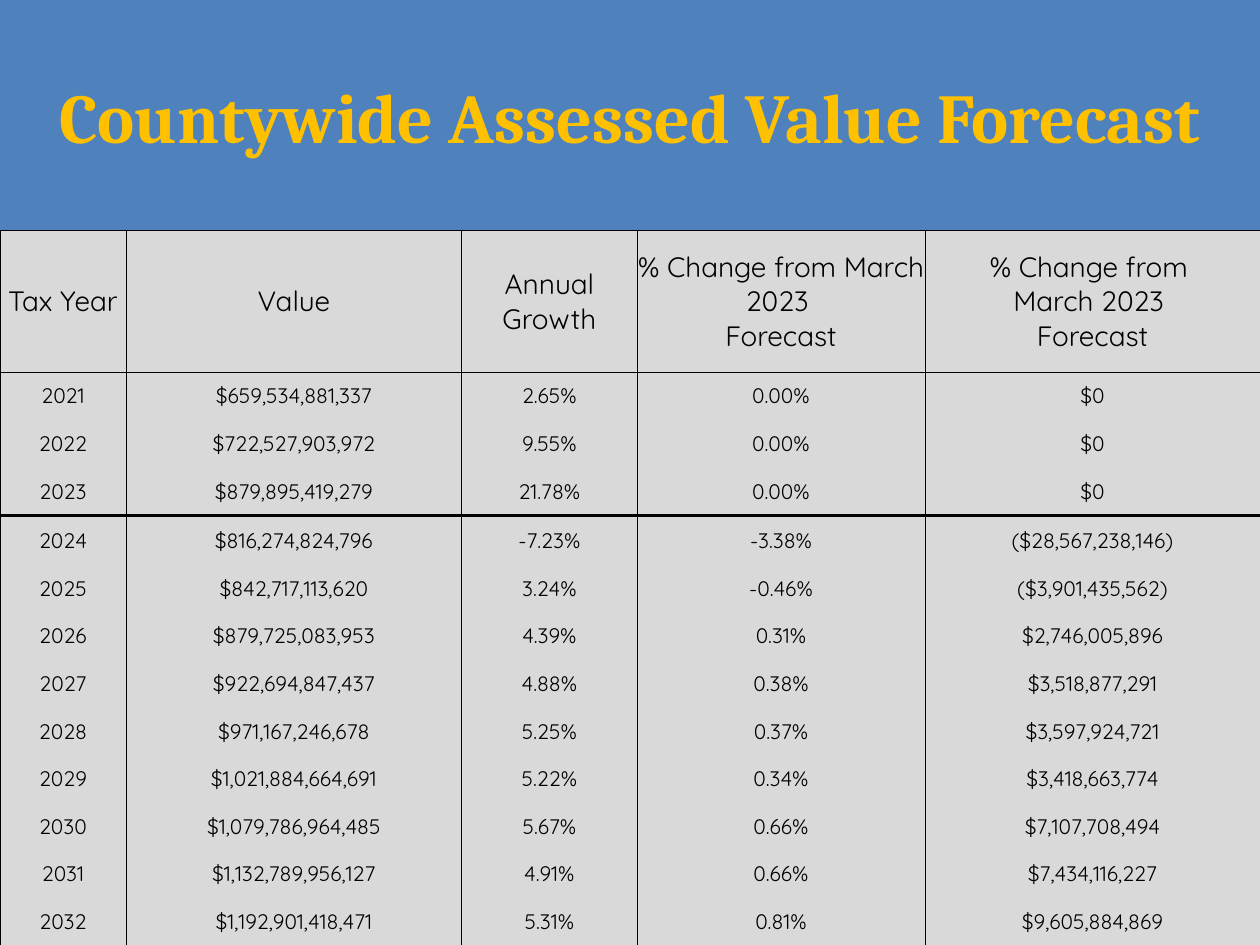
from lxml import etree
from pptx import Presentation
from pptx.dml.color import RGBColor
from pptx.enum.shapes import MSO_SHAPE
from pptx.enum.text import MSO_ANCHOR, PP_ALIGN
from pptx.oxml.ns import qn
from pptx.util import Cm, Pt

RECTANGLE = MSO_SHAPE.RECTANGLE
MIDDLE = MSO_ANCHOR.MIDDLE
CENTER = PP_ALIGN.CENTER

COLORS = {
    "banner": "4F81BD",
    "title": "FFC000",
    "cell": "D9D9D9",
    "ink": "000000",
    "page": "FFFFFF",
}
SLIDE_WIDTH, SLIDE_HEIGHT = Cm(25.4), Cm(19.05)
BANNER_HEIGHT = Cm(4.65)
COLUMN_WIDTHS = [2.54, 6.77, 3.53, 5.81, 6.75]
HEADER_HEIGHT, YEAR_HEIGHT, DIVIDED_YEAR_HEIGHT = 2.85, 0.96, 0.98
THIN, THICK = 0.5, 2

HEADINGS = [
    "Tax Year",
    "Value",
    "Annual Growth",
    "% Change from March 2023 \vForecast",
    "% Change from \vMarch 2023 \vForecast",
]
FORECAST = [
    ("2021", "$659,534,881,337", "2.65%", "0.00%", "$0"),
    ("2022", "$722,527,903,972", "9.55%", "0.00%", "$0"),
    ("2023", "$879,895,419,279", "21.78%", "0.00%", "$0"),
    ("2024", "$816,274,824,796", "-7.23%", "-3.38%", "($28,567,238,146)"),
    ("2025", "$842,717,113,620", "3.24%", "-0.46%", "($3,901,435,562)"),
    ("2026", "$879,725,083,953", "4.39%", "0.31%", "$2,746,005,896"),
    ("2027", "$922,694,847,437", "4.88%", "0.38%", "$3,518,877,291"),
    ("2028", "$971,167,246,678", "5.25%", "0.37%", "$3,597,924,721"),
    ("2029", "$1,021,884,664,691", "5.22%", "0.34%", "$3,418,663,774"),
    ("2030", "$1,079,786,964,485", "5.67%", "0.66%", "$7,107,708,494"),
    ("2031", "$1,132,789,956,127", "4.91%", "0.66%", "$7,434,116,227"),
    ("2032", "$1,192,901,418,471", "5.31%", "0.81%", "$9,605,884,869"),
]
LAST_ACTUAL_YEAR = "2023"


def color(name):
    return RGBColor.from_string(COLORS[name])


def style_paragraph(paragraph, font_name, size, color_name, bold=False):
    paragraph.alignment = CENTER
    paragraph.font.name = font_name
    paragraph.font.size = Pt(size)
    paragraph.font.bold = bold
    paragraph.font.color.rgb = color(color_name)


def add_banner(slide, title):
    banner = slide.shapes.add_shape(RECTANGLE, 0, 0, SLIDE_WIDTH, BANNER_HEIGHT)
    banner.shadow.inherit = False
    banner.fill.solid()
    banner.fill.fore_color.rgb = color("banner")
    banner.line.fill.background()
    frame = banner.text_frame
    frame.word_wrap = True
    frame.vertical_anchor = MIDDLE
    frame.text = title
    style_paragraph(frame.paragraphs[0], "Cambria", 40, "title", bold=True)


def set_borders(cell, top, bottom):
    properties = cell._tc.get_or_add_tcPr()
    sides = {"a:lnL": THIN, "a:lnR": THIN, "a:lnT": top, "a:lnB": bottom}
    for position, (tag, width) in enumerate(sides.items()):
        border = etree.Element(qn(tag), w=str(Pt(width)))
        if width:
            fill = etree.SubElement(border, qn("a:solidFill"))
            etree.SubElement(fill, qn("a:srgbClr"), val=COLORS["ink"])
        else:
            etree.SubElement(border, qn("a:noFill"))
        properties.insert(position, border)


def fill_cell(cell, text, size, top, bottom):
    cell.text = text
    cell.vertical_anchor = MIDDLE
    cell.margin_left = cell.margin_right = 0
    cell.margin_top = cell.margin_bottom = 0
    cell.fill.solid()
    cell.fill.fore_color.rgb = color("cell")
    style_paragraph(cell.text_frame.paragraphs[0], "Quicksand", size, "ink")
    set_borders(cell, top, bottom)


def add_forecast_table(slide):
    rows = [HEADINGS, *FORECAST]
    years = [row[0] for row in rows]
    divider = years.index(LAST_ACTUAL_YEAR) + 1
    rules = {0: THIN, 1: THIN, divider: THICK, len(rows): THIN}
    table = slide.shapes.add_table(
        len(rows), len(HEADINGS), 0, BANNER_HEIGHT,
        SLIDE_WIDTH, SLIDE_HEIGHT - BANNER_HEIGHT,
    ).table
    table.first_row = table.horz_banding = False
    for column, width in zip(table.columns, COLUMN_WIDTHS):
        column.width = Cm(width)
    for index, values in enumerate(rows):
        beside_divider = index in (divider - 1, divider)
        height = DIVIDED_YEAR_HEIGHT if beside_divider else YEAR_HEIGHT
        table.rows[index].height = Cm(height if index else HEADER_HEIGHT)
        top, bottom = rules.get(index, 0), rules.get(index + 1, 0)
        for cell, text in zip(table.rows[index].cells, values):
            fill_cell(cell, text, 12 if index else 16, top, bottom)


def main():
    deck = Presentation()
    deck.slide_width, deck.slide_height = SLIDE_WIDTH, SLIDE_HEIGHT
    slide = deck.slides.add_slide(deck.slide_layouts[6])
    slide.background.fill.solid()
    slide.background.fill.fore_color.rgb = color("page")
    add_banner(slide, "Countywide Assessed Value Forecast")
    add_forecast_table(slide)
    deck.save("out.pptx")


if __name__ == "__main__":
    main()
